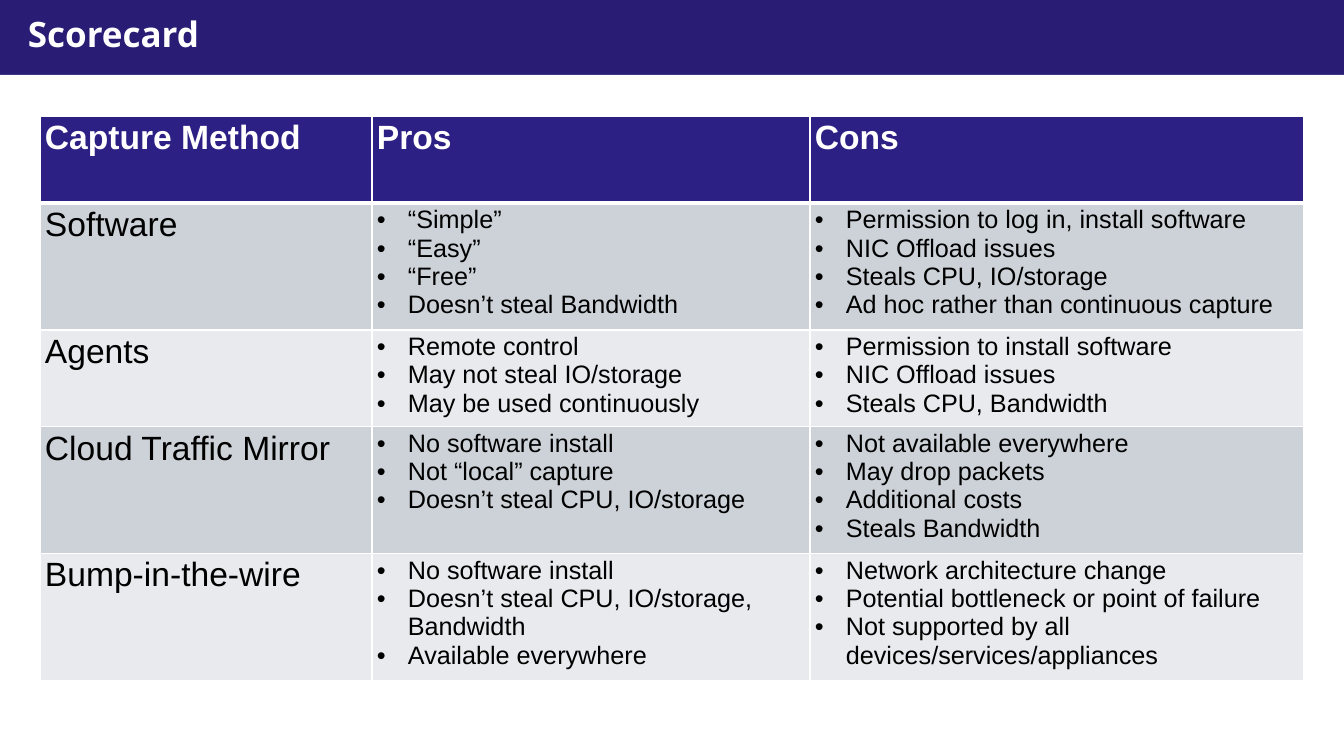
from lxml import etree
from pptx import Presentation
from pptx.dml.color import RGBColor
from pptx.enum.shapes import MSO_SHAPE
from pptx.enum.text import MSO_ANCHOR
from pptx.oxml.ns import qn
from pptx.util import Pt

RECTANGLE = MSO_SHAPE.RECTANGLE
MIDDLE = MSO_ANCHOR.MIDDLE
TOP = MSO_ANCHOR.TOP
PX = 914400 / 100.8
COLORS = {
    "band": "291C75",
    "header": "2D2084",
    "dark row": "CCD2D8",
    "light row": "E8EAED",
    "white": "FFFFFF",
    "black": "000000",
}
TITLE = {"name": "Open Sans", "size": Pt(25), "bold": True}
HEADER = {"name": "Arial", "size": Pt(24), "bold": True}
METHOD = {"name": "Arial", "size": Pt(24), "bold": False}
BULLET = {"name": "Arial", "size": Pt(18), "bold": False}

COLUMN_WIDTHS = [332, 438, 494]
ROW_HEIGHT = 87
BULLET_INDENT = 31
ROWS = [
    (["Capture Method"], ["Pros"], ["Cons"]),
    (
        ["Software"],
        ["“Simple”", "“Easy”", "“Free”", "Doesn’t steal Bandwidth"],
        ["Permission to log in, install software", "NIC Offload issues",
         "Steals CPU, IO/storage", "Ad hoc rather than continuous capture"],
    ),
    (
        ["Agents"],
        ["Remote control", "May not steal IO/storage", "May be used continuously"],
        ["Permission to install software", "NIC Offload issues", "Steals CPU, Bandwidth"],
    ),
    (
        ["Cloud Traffic Mirror"],
        ["No software install", "Not “local” capture", "Doesn’t steal CPU, IO/storage"],
        ["Not available everywhere", "May drop packets", "Additional costs", "Steals Bandwidth"],
    ),
    (
        ["Bump-in-the-wire"],
        ["No software install", "Doesn’t steal CPU, IO/storage, Bandwidth", "Available everywhere"],
        ["Network architecture change", "Potential bottleneck or point of failure",
         "Not supported by all devices/services/appliances"],
    ),
]


def px(*lengths):
    return [round(length * PX) for length in lengths]


def write(paragraph, text, font_format, color):
    run = paragraph.add_run()
    run.text = text
    for name, value in font_format.items():
        setattr(run.font, name, value)
    run.font.color.rgb = RGBColor.from_string(COLORS[color])


presentation = Presentation()
presentation.slide_width, presentation.slide_height = px(1344, 756)
slide = presentation.slides.add_slide(presentation.slide_layouts[6])
slide.background.fill.solid()
slide.background.fill.fore_color.rgb = RGBColor.from_string(COLORS["band"])

body = slide.shapes.add_shape(RECTANGLE, *px(0, 75, 1344, 681))
body.shadow.inherit = False
body.fill.solid()
body.fill.fore_color.rgb = RGBColor.from_string(COLORS["white"])
body.line.fill.background()

title = slide.shapes.add_textbox(*px(18, 9, 900, 54))
title.text_frame.word_wrap = True
title.text_frame.vertical_anchor = MIDDLE
title_paragraph = title.text_frame.paragraphs[0]
title_paragraph.line_spacing = 0.9
write(title_paragraph, "Scorecard", TITLE, "white")

table = slide.shapes.add_table(
    len(ROWS), len(COLUMN_WIDTHS),
    *px(40, 116, sum(COLUMN_WIDTHS), ROW_HEIGHT * len(ROWS)),
).table
for column, width in zip(table.columns, px(*COLUMN_WIDTHS)):
    column.width = width

margin_x, margin_y, indent = px(5, 3, BULLET_INDENT)
cell_format = {
    "margin_left": margin_x, "margin_right": margin_x,
    "margin_top": margin_y, "margin_bottom": margin_y,
    "vertical_anchor": TOP,
}
for row_index, row in enumerate(ROWS):
    table.rows[row_index].height = px(ROW_HEIGHT)[0]
    is_header = row_index == 0
    fill_name = "header" if is_header else "dark row" if row_index % 2 else "light row"
    border_widths = {
        "a:lnL": 1,
        "a:lnR": 1,
        "a:lnT": 3 if row_index == 1 else 1,
        "a:lnB": 3 if is_header else 1,
    }
    for column_index, lines in enumerate(row):
        cell = table.cell(row_index, column_index)
        for name, value in cell_format.items():
            setattr(cell, name, value)

        properties = cell._tc.get_or_add_tcPr()
        for tag, points in border_widths.items():
            border = etree.SubElement(properties, qn(tag), w=str(Pt(points)))
            border_fill = etree.SubElement(border, qn("a:solidFill"))
            etree.SubElement(border_fill, qn("a:srgbClr"), val=COLORS["white"])
        cell.fill.solid()
        cell.fill.fore_color.rgb = RGBColor.from_string(COLORS[fill_name])

        has_bullets = not is_header and column_index > 0
        font_format = HEADER if is_header else BULLET if has_bullets else METHOD
        for line_index, line in enumerate(lines):
            frame = cell.text_frame
            paragraph = frame.add_paragraph() if line_index else frame.paragraphs[0]
            if has_bullets:
                paragraph_properties = paragraph._p.get_or_add_pPr()
                paragraph_properties.set("marL", str(indent))
                paragraph_properties.set("indent", str(-indent))
                bullet_color = etree.SubElement(paragraph_properties, qn("a:buClr"))
                etree.SubElement(bullet_color, qn("a:srgbClr"), val=COLORS["black"])
                etree.SubElement(paragraph_properties, qn("a:buFont"), typeface="Arial")
                etree.SubElement(paragraph_properties, qn("a:buChar"), char="•")
            write(paragraph, line, font_format, "white" if is_header else "black")

presentation.save("out.pptx")
